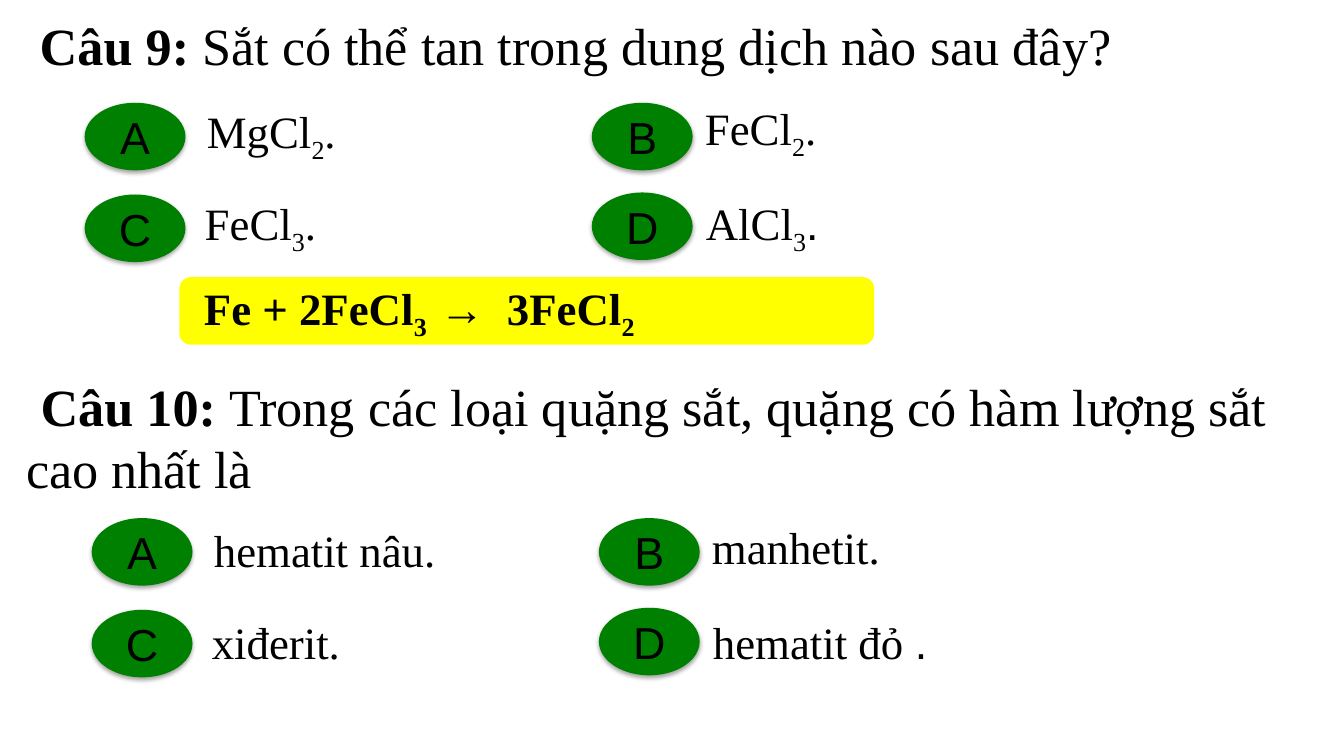
from lxml import etree
from pptx import Presentation, util as u
from pptx.dml import color
from pptx.enum import shapes, text
from pptx.oxml import ns

SHADE = (
    f'<a:effectLst {ns.nsdecls("a")}>'
    '<a:outerShdw blurRad="40000" dist="23000" dir="5400000" rotWithShape="0">'
    '<a:srgbClr val="000000"><a:alpha val="35000"/></a:srgbClr>'
    '</a:outerShdw></a:effectLst>'
)
KIND = shapes.MSO_SHAPE


def px(n):
    """100 px to the inch."""
    return u.Emu(n * 9144)


def hue(code):
    return color.RGBColor.from_string(code)


class Quiz:
    ink, green, yellow = "000000", "008000", "FFFF00"
    serif, sans = "Times New Roman", "Arial"
    big, mid = 37.3, 32
    high = 67

    def __init__(self, slide):
        self.slide = slide

    # Runs are (words, marks): b = bold, s = subscript, a = sans font
    def put(self, frame, runs, size, align=text.PP_ALIGN.LEFT):
        para = frame.paragraphs[0]
        para.alignment = align
        for words, marks in runs:
            run = para.add_run()
            run.text = words
            font = run.font
            font.size = u.Pt(size)
            font.name = self.sans if "a" in marks else self.serif
            font.bold = "b" in marks
            font.color.rgb = hue(self.ink)
            if "s" in marks:
                run._r.get_or_add_rPr().set("baseline", "-25000")

    def ask(self, box, spot, label, words):
        box.left, box.top, box.width, box.height = map(px, spot)
        frame = box.text_frame
        frame.word_wrap = True
        frame.auto_size = text.MSO_AUTO_SIZE.NONE
        frame.vertical_anchor = text.MSO_ANCHOR.TOP
        runs = [(" ", "a"), (label + " ", "b"), (words, "")]
        self.put(frame, runs, self.big)

    def title(self, *args):
        self.ask(self.slide.shapes.title, *args)

    def label(self, *args):
        self.ask(self.slide.shapes.add_textbox(0, 0, 0, 0), *args)

    def shape(self, kind, x, y, wide, fill=None):
        item = self.slide.shapes.add_shape(kind, px(x), px(y), px(wide), px(self.high))
        item.shadow.inherit = False
        item.line.fill.background()
        if fill:
            item.fill.solid()
            item.fill.fore_color.rgb = hue(fill)
        else:
            item.fill.background()
        item.text_frame.vertical_anchor = text.MSO_ANCHOR.MIDDLE
        return item

    def badge(self, x, y, letter):
        item = self.shape(KIND.OVAL, x, y, 100, self.green)
        props = item._element.spPr
        props.replace(props.find(ns.qn("a:effectLst")), etree.fromstring(SHADE))
        self.put(item.text_frame, [(letter, "a")], self.mid, text.PP_ALIGN.CENTER)

    def box(self, x, y, wide, runs, fill=None):
        item = self.shape(KIND.ROUNDED_RECTANGLE, x, y, wide, fill)
        self.put(item.text_frame, runs, self.mid)

    def picks(self, dx, dy, answers):
        for (letter, spot, place, wide), runs in zip(PICKS, answers):
            self.badge(spot[0] + dx, spot[1] + dy, letter)
            self.box(place[0] + dx, place[1] + dy, wide, runs)


# Letter, badge corner, answer corner, answer width
PICKS = [
    ("A", (84, 102), (192, 100), 278),
    ("B", (587, 102), (686, 97), 278),
    ("C", (84, 193), (190, 191), 314),
    ("D", (587, 191), (687, 191), 284),
]


def main():
    deck = Presentation()
    deck.slide_width, deck.slide_height = px(1333), px(750)
    quiz = Quiz(deck.slides.add_slide(deck.slide_layouts[5]))

    # Question 9
    quiz.title((15, 8, 1300, 73), "Câu 9:", "Sắt có thể tan trong dung dịch nào sau đây?")
    salts = [("MgCl", "2", ""), ("FeCl", "2", ""), ("FeCl", "3", ""), ("AlCl", "3", "a")]
    quiz.picks(0, 0, [[(salt, ""), (count, "s"), (".", dot)] for salt, count, dot in salts])

    # Worked equation
    quiz.box(178, 275, 689, [
        (" Fe + 2FeCl", "b"), ("3  ", "bs"), ("→  3FeCl", "b"), ("2", "bs"),
    ], quiz.yellow)

    # Question 10
    quiz.label((16, 366, 1300, 136), "Câu 10:",
               "Trong các loại quặng sắt, quặng có hàm lượng sắt cao nhất là")
    quiz.picks(7, 412, [
        [("hematit nâu.", "")],
        [("manhetit.", "")],
        [("xiđerit.", "")],
        [("hematit đỏ ", ""), (".", "a")],
    ])

    deck.save("out.pptx")


if __name__ == "__main__":
    main()
